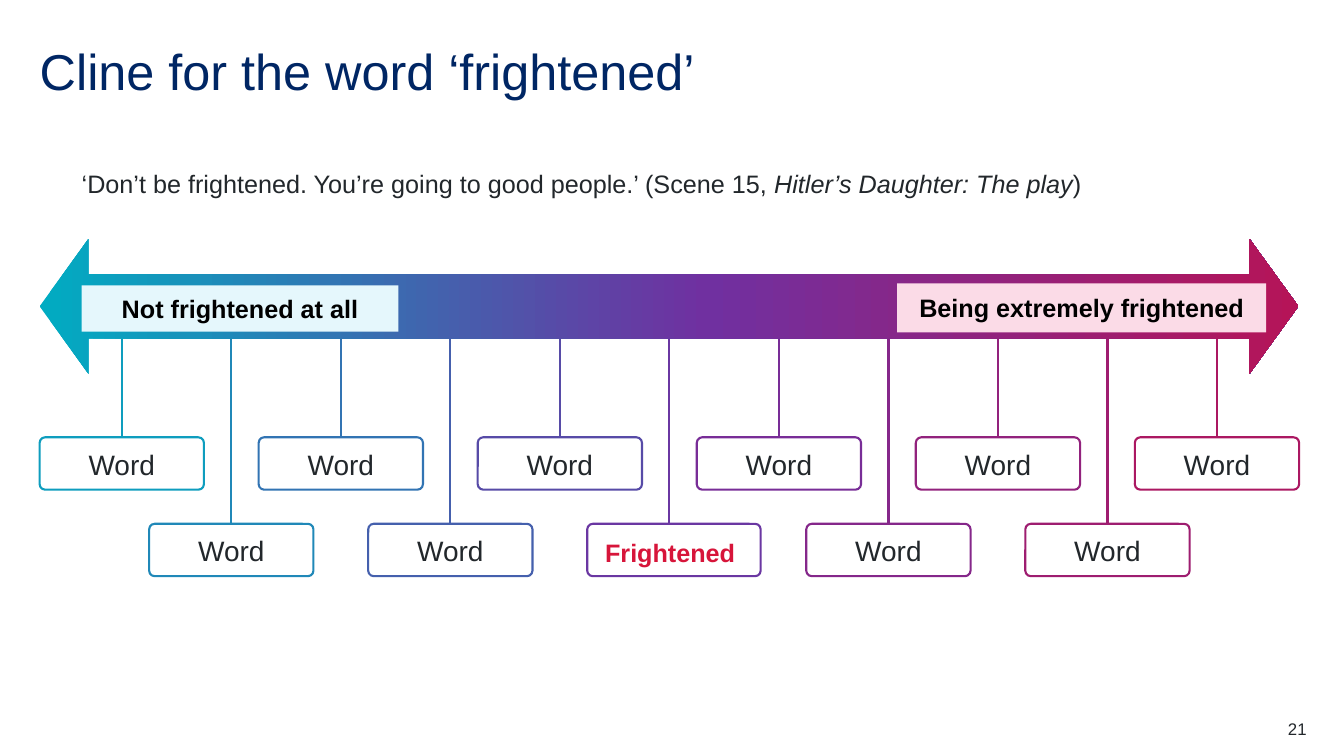
from copy import deepcopy

from pptx import Presentation
from pptx.dml.color import RGBColor
from pptx.enum import shapes, text
from pptx.oxml import ns
from pptx.util import Cm, Pt

NAVY = RGBColor(0x00, 0x26, 0x64)
INK = RGBColor(0x22, 0x27, 0x2B)
BLACK = RGBColor(0x00, 0x00, 0x00)
RED = RGBColor(0xD7, 0x15, 0x3A)
PALE_BLUE = RGBColor(0xE5, 0xF7, 0xFC)
PALE_PINK = RGBColor(0xFB, 0xDB, 0xE7)
TEAL = RGBColor(0x00, 0xAC, 0xC2)
PURPLE = RGBColor(0x70, 0x30, 0xA0)
MAGENTA = RGBColor(0xB5, 0x14, 0x58)
WORD_COLOURS = [RGBColor.from_string(code) for code in (
    "0E9DBE", "2088B8", "3274B3", "4560AD", "574BA7", "6A37A2",
    "782D97", "85278A", "92227D", "9E1D70", "AB1862")]

LEFT, CENTRE, RIGHT = text.PP_ALIGN.LEFT, text.PP_ALIGN.CENTER, text.PP_ALIGN.RIGHT
MIDDLE, BOTTOM = text.MSO_ANCHOR.MIDDLE, text.MSO_ANCHOR.BOTTOM
KEYWORD_INDEX = 5


class ClineSlide:
    font = "Arial"
    line_width = Pt(1.5)

    def __init__(self, deck):
        self.slide = deck.slides.add_slide(deck.slide_layouts[5])

    def format_frame(self, frame, margins=(0, 0, 0, 0), anchor=text.MSO_ANCHOR.TOP, wrap=True):
        frame.margin_left, frame.margin_top, frame.margin_right, frame.margin_bottom = map(Cm, margins)
        frame.vertical_anchor = anchor
        frame.auto_size = text.MSO_AUTO_SIZE.NONE
        frame.word_wrap = wrap

    def add_spans(self, frame, spans, size, colour, align=LEFT, bold=False):
        para = frame.paragraphs[0]
        para.alignment = align
        for words, italic in spans:
            span = para.add_run()
            span.text = words
            span.font.name = self.font
            span.font.size = Pt(size)
            span.font.bold = bold
            span.font.italic = italic
            span.font.color.rgb = colour

    def title(self, words, place):
        box = self.slide.shapes.title
        box.left, box.top, box.width, box.height = map(Cm, place)
        self.format_frame(box.text_frame, anchor=MIDDLE)
        self.add_spans(box.text_frame, [(words, False)], 36, NAVY)
        box.text_frame.paragraphs[0].line_spacing = 0.9

    def label(self, spans, place, size, align=LEFT, wrap=True):
        box = self.slide.shapes.add_textbox(*map(Cm, place))
        self.format_frame(box.text_frame, wrap=wrap)
        self.add_spans(box.text_frame, spans, size, INK, align)

    def shape(self, kind, place, adjustments=()):
        shape = self.slide.shapes.add_shape(kind, *map(Cm, place))
        shape.shadow.inherit = False
        shape.line.fill.background()
        for index, value in enumerate(adjustments):
            shape.adjustments[index] = value
        return shape

    def gradient_arrow(self, place, stops):
        arrow = self.shape(shapes.MSO_SHAPE.LEFT_RIGHT_ARROW, place, (0.475, 0.362))
        arrow.fill.gradient()
        arrow.fill.gradient_angle = 0
        stop_list = arrow.element.spPr.find(".//" + ns.qn("a:gsLst"))
        stop_list.append(deepcopy(stop_list[0]))
        for stop, (position, colour) in zip(arrow.fill.gradient_stops, stops):
            stop.position = position
            stop.color.rgb = colour

    def end_label(self, words, place, fill):
        box = self.shape(shapes.MSO_SHAPE.RECTANGLE, place)
        box.fill.solid()
        box.fill.fore_color.rgb = fill
        self.format_frame(box.text_frame, (0.23, 0.1, 0.23, 0.1), MIDDLE)
        self.add_spans(box.text_frame, [(words, False)], 18, BLACK, CENTRE, True)

    def word_box(self, words, place, outline, size=20, colour=INK, align=CENTRE, bold=False):
        box = self.shape(shapes.MSO_SHAPE.ROUNDED_RECTANGLE, place, (0.106,))
        box.fill.background()
        box.line.color.rgb = outline
        box.line.width = self.line_width
        self.format_frame(box.text_frame, (0.41, 0, 0.41, 0.18), BOTTOM)
        self.add_spans(box.text_frame, [(words, False)], size, colour, align, bold)

    def stem(self, x, top, bottom, colour):
        line = self.slide.shapes.add_connector(
            shapes.MSO_CONNECTOR.STRAIGHT, Cm(x), Cm(top), Cm(x), Cm(bottom))
        line.line.color.rgb = colour
        line.line.width = self.line_width
        properties = line._element.spPr
        properties.append(properties.makeelement(ns.qn("a:effectLst"), {}))


def main():
    deck = Presentation()
    deck.slide_width, deck.slide_height = Cm(33.87), Cm(19.05)
    page = ClineSlide(deck)
    page.title("Cline for the word ‘frightened’", (1, 1.12, 31.9, 1.52))
    page.label([
        ("‘Don’t be frightened. You’re going to good people.’ (Scene 15, ", False),
        ("Hitler’s Daughter: The play", True),
        (")", False),
    ], (2.06, 4.24, 25.83, 0.74), 18, wrap=False)

    page.gradient_arrow((1, 6.02, 31.72, 3.4), [(0, TEAL), (0.53, PURPLE), (1, MAGENTA)])
    page.end_label("Not frightened at all", (2.06, 7.19, 7.98, 1.17), PALE_BLUE)
    page.end_label("Being extremely frightened", (22.61, 7.14, 9.3, 1.24), PALE_PINK)

    step, box_width, box_height = 2.76, 4.14, 1.32
    for index, colour in enumerate(WORD_COLOURS):
        left = 1 + index * step
        top = 13.2 if index % 2 else 11.02
        page.stem(left + box_width / 2, 8.53, top, colour)
        if index == KEYWORD_INDEX:
            page.word_box("Frightened", (left, top, 4.37, box_height), colour, 18, RED, LEFT, True)
        else:
            page.word_box("Word", (left, top, box_width, box_height), colour)

    page.label([("21", False)], (30.92, 18.11, 2.01, 0.51), 12, RIGHT)
    deck.save("out.pptx")


if __name__ == "__main__":
    main()
